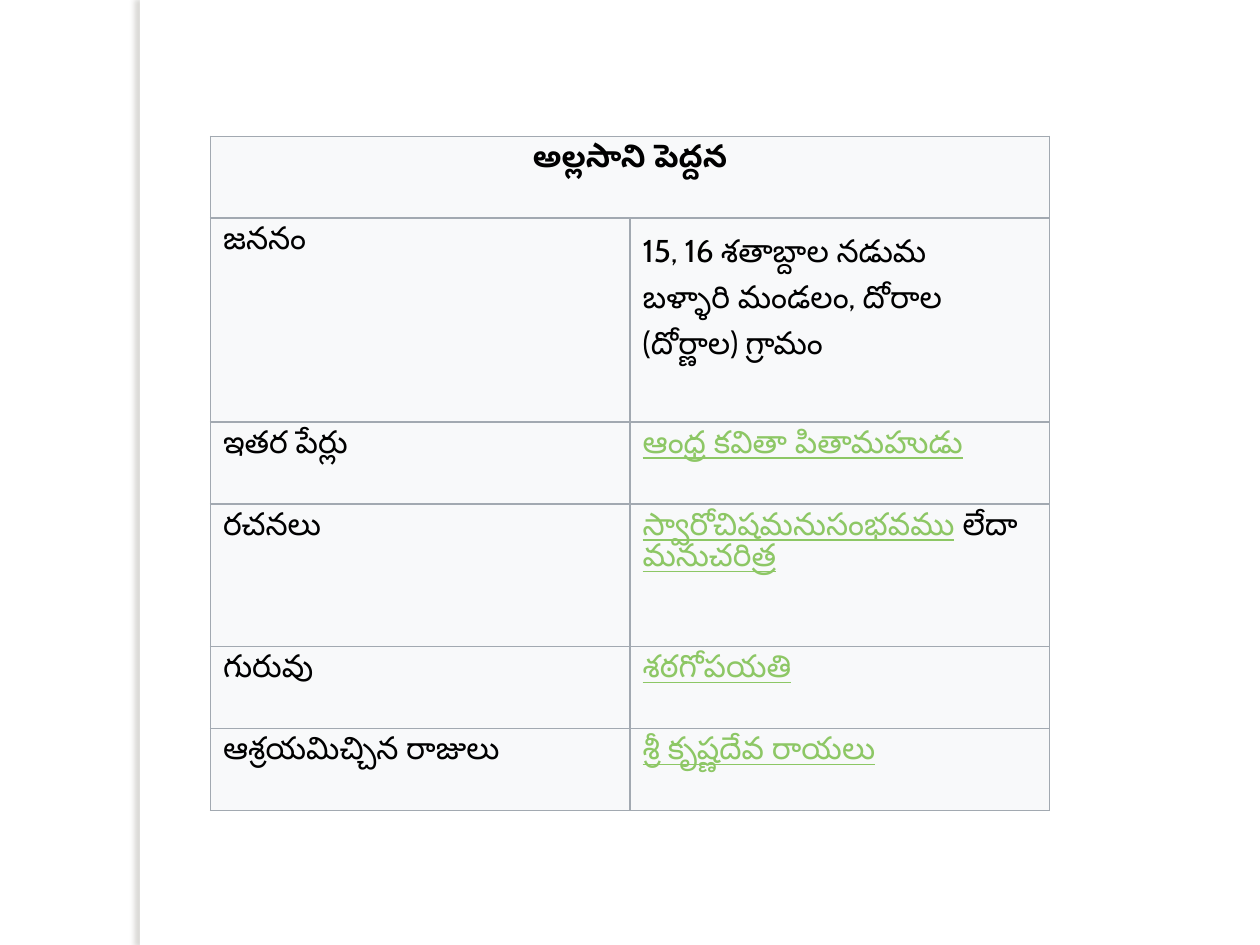
from lxml import etree
from pptx import Presentation
from pptx.dml.color import RGBColor
from pptx.enum import shapes, text
from pptx.oxml import ns
from pptx.util import Inches, Pt

WHITE, BLACK, LINK, PANEL, BORDER, SHADE = (
    "FFFFFF", "000000", "8DC765", "F8F9FA", "A2A9B1", "736F63")
PLAIN = {"bold": False, "underline": False}
HEADING = {"bold": True, "underline": False}
LINKED = {"bold": False, "underline": True}

POET = "అల్లసాని పెద్దన"
# Row height, label, and the value as (words, is a link) pieces
FACTS = [
    (1.62, "జననం", [("15, 16 శతాబ్దాల నడుమ\vబళ్ళారి మండలం, దోరాల (దోర్ణాల) గ్రామం", False)]),
    (0.65, "ఇతర పేర్లు", [("ఆంధ్ర కవితా పితామహుడు", True)]),
    (1.13, "రచనలు", [("స్వారోచిషమనుసంభవము", True), (" లేదా ", False),
                     ("మనుచరిత్ర", True)]),
    (0.65, "గురువు", [("శఠగోపయతి", True)]),
    (0.65, "ఆశ్రయమిచ్చిన రాజులు", [("శ్రీ కృష్ణదేవ రాయలు", True)]),
]
HEADING_HEIGHT = 0.65


def rgb(value):
    return RGBColor.from_string(value)


def add_element(parent, tag, **attributes):
    return etree.SubElement(parent, ns.qn(tag), attributes)


def add_side_strip(slide):
    strip = slide.shapes.add_shape(
        shapes.MSO_SHAPE.RECTANGLE, Inches(1.11), 0, Inches(0.08), Inches(7.5))
    strip.fill.solid()
    strip.fill.fore_color.rgb = rgb(WHITE)
    strip.line.fill.background()
    strip.shadow.inherit = False
    effects = strip._element.spPr.find(ns.qn("a:effectLst"))
    shadow = add_element(effects, "a:outerShdw", blurRad=str(Pt(3)),
                         dist=str(Pt(3)), dir=str(180 * 60000))
    shade = add_element(shadow, "a:srgbClr", val=SHADE)
    add_element(shade, "a:alpha", val="25000")


def style_cell(cell):
    """Give the cell its borders, which must precede the fill."""
    properties = cell._tc.get_or_add_tcPr()
    for side in ("a:lnL", "a:lnR", "a:lnT", "a:lnB"):
        edge = add_element(properties, side, w=str(Pt(0.75)))
        add_element(add_element(edge, "a:solidFill"), "a:srgbClr", val=BORDER)
    cell.fill.solid()
    cell.fill.fore_color.rgb = rgb(PANEL)


def add_words(paragraph, words, font_format=PLAIN, color=BLACK):
    """Add the words, with a line break at each vertical tab."""
    for index, line in enumerate(words.split("\v")):
        if index:
            paragraph.add_line_break()
        run = paragraph.add_run()
        run.text = line
        for attribute, value in font_format.items():
            setattr(run.font, attribute, value)
        run.font.name = "Cabin"
        run.font.size = Pt(18)
        run.font.color.rgb = rgb(color)


def add_fact_table(slide):
    heights = [HEADING_HEIGHT] + [height for height, _, _ in FACTS]
    table = slide.shapes.add_table(
        len(heights), 2, Inches(1.67), Inches(1.08),
        Inches(6.67), Inches(sum(heights))).table
    for column in table.columns:
        column.width = Inches(3.33)
    for row, height in zip(table.rows, heights):
        row.height = Inches(height)
        for cell in row.cells:
            style_cell(cell)

    table.cell(0, 0).merge(table.cell(0, 1))
    heading = table.cell(0, 0).text_frame.paragraphs[0]
    heading.alignment = text.PP_ALIGN.CENTER
    add_words(heading, POET, HEADING)

    for row, (_, label, pieces) in enumerate(FACTS, start=1):
        add_words(table.cell(row, 0).text_frame.paragraphs[0], label)
        value = table.cell(row, 1).text_frame.paragraphs[0]
        for words, is_link in pieces:
            add_words(value, words, *((LINKED, LINK) if is_link else ()))
    table.cell(1, 1).text_frame.paragraphs[0].line_spacing = 1.2


def main():
    deck = Presentation()
    deck.slide_width, deck.slide_height = Inches(10), Inches(7.5)
    slide = deck.slides.add_slide(deck.slide_layouts[6])
    add_side_strip(slide)
    add_fact_table(slide)
    deck.save("out.pptx")


if __name__ == "__main__":
    main()
